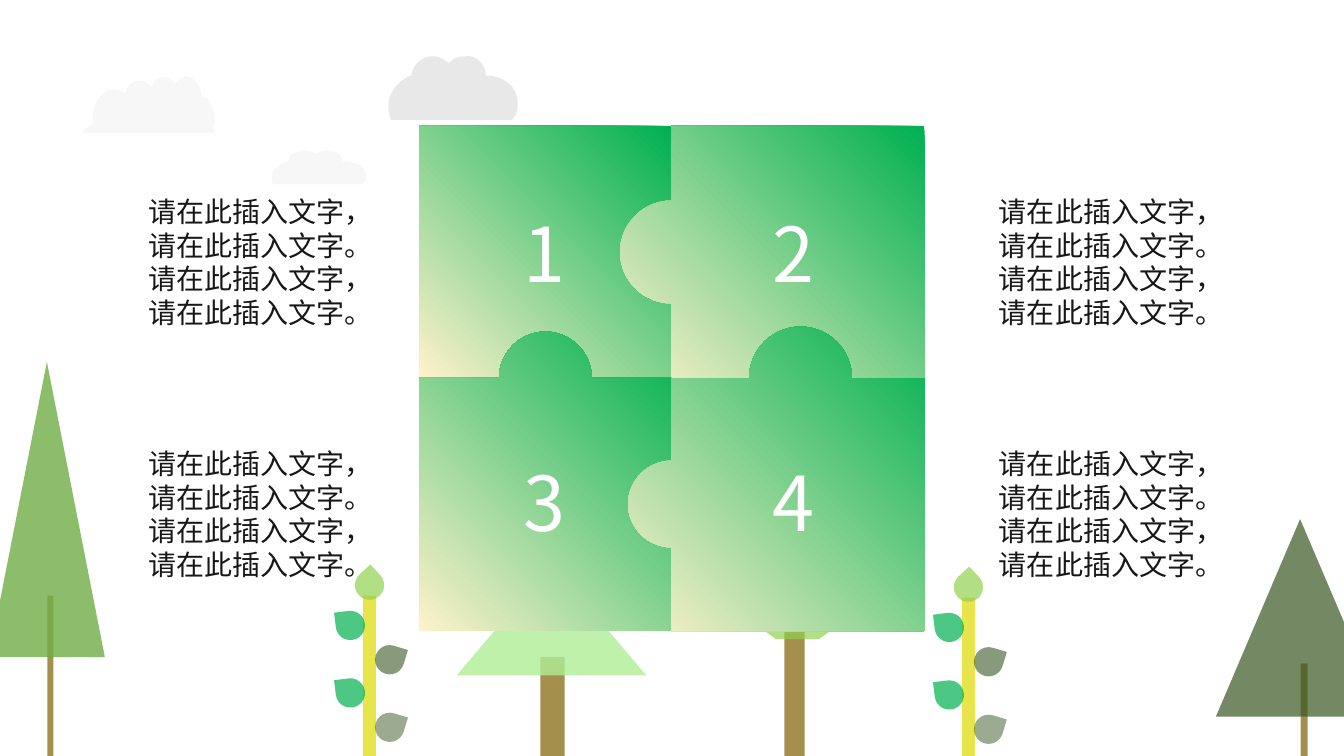
from dataclasses import dataclass
from itertools import product

from lxml.etree import Element, SubElement
from pptx import Presentation
from pptx.dml.color import RGBColor
from pptx.enum.shapes import MSO_SHAPE as Preset
from pptx.enum.text import MSO_AUTO_SIZE as AutoSize, PP_ALIGN as Align
from pptx.oxml.ns import qn
from pptx.util import Inches, Pt


@dataclass(frozen=True)
class Theme:
    font: str = "Noto Sans CJK SC"
    number_size: int = 54
    body_size: int = 20
    white: str = "FFFFFF"
    ink: str = "181717"
    trunk: str = "806000"
    stem: str = "DFDA00"
    green: str = "00B050"
    cream: str = "FFF2CC"
    dark_leaf: str = "385723"
    deep_green: str = "1E6818"
    lime: str = "92D050"
    pine: str = "70AD47"
    mint: str = "AFEE96"
    pale_cloud: str = "F2F2F2"
    grey_cloud: str = "D9D9D9"


THEME = Theme()
COLUMN_EDGES = (4.16, 6.66, 9.17)
ROW_EDGES = (1.25, 3.75, 6.26)
UPPER_TABS = ((5.41, 0.46), (7.94, 0.51))
SIDE_TABS = ((2.5, 0.51), (5.0, 0.43))
ADVICE = ("请在此插入文字，请在此插入文字。",) * 2

PALE_CLOUDS = (
    ((1.86, 0.76), (
        ((1.88, 0.77), (1.9, 0.77), (1.91, 0.78)),
        ((1.96, 0.81), (1.99, 0.87), (2, 0.94)),
        ((2, 0.95),), ((2.04, 0.97),),
        ((2.08, 1), (2.1, 1.04), (2.12, 1.1)),
        ((2.13, 1.16), (2.13, 1.22), (2.11, 1.27)),
        ((2.13, 1.32),), ((0.83, 1.32),), ((0.83, 1.3),),
        ((0.86, 1.27), (0.88, 1.25), (0.92, 1.24)),
        ((0.91, 1.15), (0.93, 1.06), (0.97, 0.99)),
        ((1.04, 0.88), (1.15, 0.86), (1.24, 0.93)),
        ((1.26, 0.88),),
        ((1.32, 0.78), (1.43, 0.77), (1.5, 0.87)),
        ((1.54, 0.8),),
        ((1.56, 0.78), (1.58, 0.77), (1.61, 0.77)),
        ((1.64, 0.76), (1.68, 0.77), (1.71, 0.8)),
        ((1.73, 0.84),),
        ((1.77, 0.79), (1.82, 0.76), (1.86, 0.76)),
    )),
    ((3.24, 1.49), (
        ((3.26, 1.49), (3.27, 1.49), (3.29, 1.5)),
        ((3.36, 1.51), (3.4, 1.55), (3.4, 1.6)),
        ((3.47, 1.6), (3.54, 1.62), (3.58, 1.65)),
        ((3.63, 1.7), (3.65, 1.75), (3.62, 1.8)),
        ((3.59, 1.83),), ((2.71, 1.83),), ((2.7, 1.8),),
        ((2.67, 1.72), (2.74, 1.63), (2.86, 1.6)),
        ((2.86, 1.55), (2.92, 1.5), (2.99, 1.5)),
        ((3.05, 1.49), (3.1, 1.5), (3.13, 1.53)),
        ((3.16, 1.51), (3.2, 1.49), (3.24, 1.49)),
    )),
)
GREY_CLOUD = ((4.61, 0.56), (
    ((4.63, 0.55), (4.65, 0.56), (4.67, 0.56)),
    ((4.76, 0.58), (4.82, 0.66), (4.82, 0.75)),
    ((4.92, 0.75), (5.01, 0.79), (5.07, 0.85)),
    ((5.14, 0.93), (5.15, 1.04), (5.12, 1.13)),
    ((5.08, 1.19),), ((3.88, 1.19),), ((3.86, 1.13),),
    ((3.82, 0.97), (3.92, 0.81), (4.08, 0.75)),
    ((4.09, 0.66), (4.16, 0.58), (4.26, 0.56)),
    ((4.33, 0.55), (4.41, 0.58), (4.45, 0.63)),
    ((4.49, 0.58), (4.55, 0.56), (4.61, 0.56)),
))


def apply_format(target, values):
    for key, value in values.items():
        setattr(target, key, value)


def paint(shape, color, opacity):
    shape.shadow.inherit = False
    shape.line.fill.background()
    shape.fill.solid()
    shape.fill.fore_color.rgb = RGBColor.from_string(color)
    swatch = shape.fill._xPr.find(qn("a:solidFill"))[0]
    SubElement(swatch, qn("a:alpha")).set("val", str(opacity * 1000))


def add_part(slide, preset, box, color, opacity=70, rotation=0):
    part = slide.shapes.add_shape(preset, *map(Inches, box))
    part.rotation = rotation
    paint(part, color, opacity)


def add_outline(slide, start, segments):
    builder = slide.shapes.build_freeform(*map(Inches, start), scale=1.0)
    builder.add_line_segments([tuple(map(Inches, s[-1])) for s in segments], close=True)
    outline = builder.convert_to_shape()
    for line, segment in zip(list(outline._element.iter(qn("a:lnTo"))), segments):
        if len(segment) == 3:
            curve = Element(qn("a:cubicBezTo"))
            for x, y in segment:
                knot = SubElement(curve, qn("a:pt"))
                knot.set("x", str(Inches(x) - outline.left))
                knot.set("y", str(Inches(y) - outline.top))
            line.getparent().replace(line, curve)
    return outline


def add_cloud(slide, cloud, color):
    paint(add_outline(slide, *cloud), color, 60)


def quarter(start, corner, end, pull=0.55):
    controls = [tuple(a + pull * (b - a) for a, b in zip(tip, corner)) for tip in (start, end)]
    return (*controls, end)


def tab_segments(points):
    start, first_corner, crest, last_corner, end = points
    return [(start,), quarter(start, first_corner, crest), quarter(crest, last_corner, end)]


def add_puzzle_piece(slide, row, column):
    left, right = COLUMN_EDGES[column:column + 2]
    top, bottom = ROW_EDGES[row:row + 2]
    seam_x, seam_y = COLUMN_EDGES[1], ROW_EDGES[1]
    x, r = UPPER_TABS[column]
    upper = [(x - r, seam_y), (x - r, seam_y - r), (x, seam_y - r), (x + r, seam_y - r), (x + r, seam_y)]
    y, r = SIDE_TABS[row]
    side = [(seam_x, y - r), (seam_x - r, y - r), (seam_x - r, y), (seam_x - r, y + r), (seam_x, y + r)]
    segments = tab_segments(upper) if row else []
    segments += [((right, top),)] + ([] if column else tab_segments(side))
    segments += [((right, bottom),)] + ([] if row else tab_segments(upper[::-1]))
    segments += [((left, bottom),)] + (tab_segments(side[::-1]) if column else [])
    piece = add_outline(slide, (left, top), segments)
    piece.shadow.inherit = False
    piece.line.fill.background()
    piece.fill.gradient()
    piece.fill.gradient_angle = 225
    for stop, color in zip(piece.fill.gradient_stops, (THEME.green, THEME.cream)):
        stop.color.rgb = RGBColor.from_string(color)


def add_text(slide, box, lines, size, color, align):
    frame = slide.shapes.add_textbox(*map(Inches, box)).text_frame
    apply_format(frame, {"word_wrap": True, "auto_size": AutoSize.SHAPE_TO_FIT_TEXT})
    for index, line in enumerate(lines):
        paragraph = frame.add_paragraph() if index else frame.paragraphs[0]
        paragraph.alignment = align
        run = paragraph.add_run()
        run.text = line
        apply_format(run.font, {"size": Pt(size), "name": THEME.font})
        run.font.color.rgb = RGBColor.from_string(color)
        SubElement(run.font._element, qn("a:ea")).set("typeface", THEME.font)


def add_sprout(slide, x, y):
    add_part(slide, Preset.RECTANGLE, (x, y, 0.13, 1.59), THEME.stem)
    leaves = (
        (-0.27, 0.82, 263.1, THEME.green, 70), (-0.27, 0.15, 263.1, THEME.green, 70),
        (0.12, 0.49, 16.9, THEME.dark_leaf, 60), (0.12, 1.16, 16.9, THEME.dark_leaf, 50),
        (-0.08, -0.25, 317.3, THEME.lime, 70),
    )
    for dx, dy, rotation, color, opacity in leaves:
        add_part(slide, Preset.TEAR, (x + dx, y + dy, 0.29, 0.29), color, opacity, rotation)


def add_tree(slide, trunk, crowns, preset=Preset.ISOSCELES_TRIANGLE, branches=()):
    add_part(slide, Preset.RECTANGLE, trunk, THEME.trunk)
    for box, rotation in branches:
        add_part(slide, Preset.RECTANGLE, box, THEME.trunk, rotation=rotation)
    for box, color, opacity in crowns:
        add_part(slide, preset, box, color, opacity)


def main():
    deck = Presentation()
    apply_format(deck, {"slide_width": Inches(13.33), "slide_height": Inches(7.5)})
    slide = deck.slides.add_slide(deck.slide_layouts[6])

    add_tree(slide, (12.9, 6.58, 0.07, 0.92), [((12.06, 5.15, 1.67, 1.96), THEME.dark_leaf, 70)])
    for cloud in PALE_CLOUDS:
        add_cloud(slide, cloud, THEME.pale_cloud)
    add_cloud(slide, GREY_CLOUD, THEME.grey_cloud)
    add_tree(slide, (0.47, 5.91, 0.06, 1.59), [((-0.11, 3.59, 1.15, 2.93), THEME.pine, 80)])
    add_sprout(slide, 9.54, 5.93)
    add_tree(slide, (5.36, 6.52, 0.24, 0.98), [
        ((4.53, 5.59, 1.88, 1.11), THEME.mint, 80),
        ((4.53, 5.08, 1.88, 1.11), THEME.green, 70),
        ((4.57, 4.68, 1.7, 1.01), THEME.deep_green, 70)])
    add_tree(slide, (7.78, 5.95, 0.2, 1.59), [((7.11, 4.32, 1.6, 2.02), THEME.lime, 70)], Preset.DODECAGON, (
        ((7.58, 5.38, 0.1, 0.66), 324), ((8, 4.87, 0.15, 1.14), 19.8),
        ((7.65, 4.97, 0.05, 0.63), 19.8), ((7.55, 4.83, 0.05, 0.43), 149.8)))
    add_sprout(slide, 3.6, 5.91)

    cells = list(product(range(2), repeat=2))
    for row, column in cells:
        add_puzzle_piece(slide, row, column)
    for number, (row, column) in enumerate(cells, 1):
        box = ((4.61, 7.07)[column], (2, 4.47)[row], 1.59, 1.01)
        add_text(slide, box, [str(number)], THEME.number_size, THEME.white, Align.CENTER)
    for column, row in cells:
        box = ((1.37, 9.81)[column], (1.88, 4.38)[row], (2.57, 2.46)[column], 1.45)
        add_text(slide, box, ADVICE, THEME.body_size, THEME.ink, Align.LEFT)
    deck.save("out.pptx")


if __name__ == "__main__":
    main()
